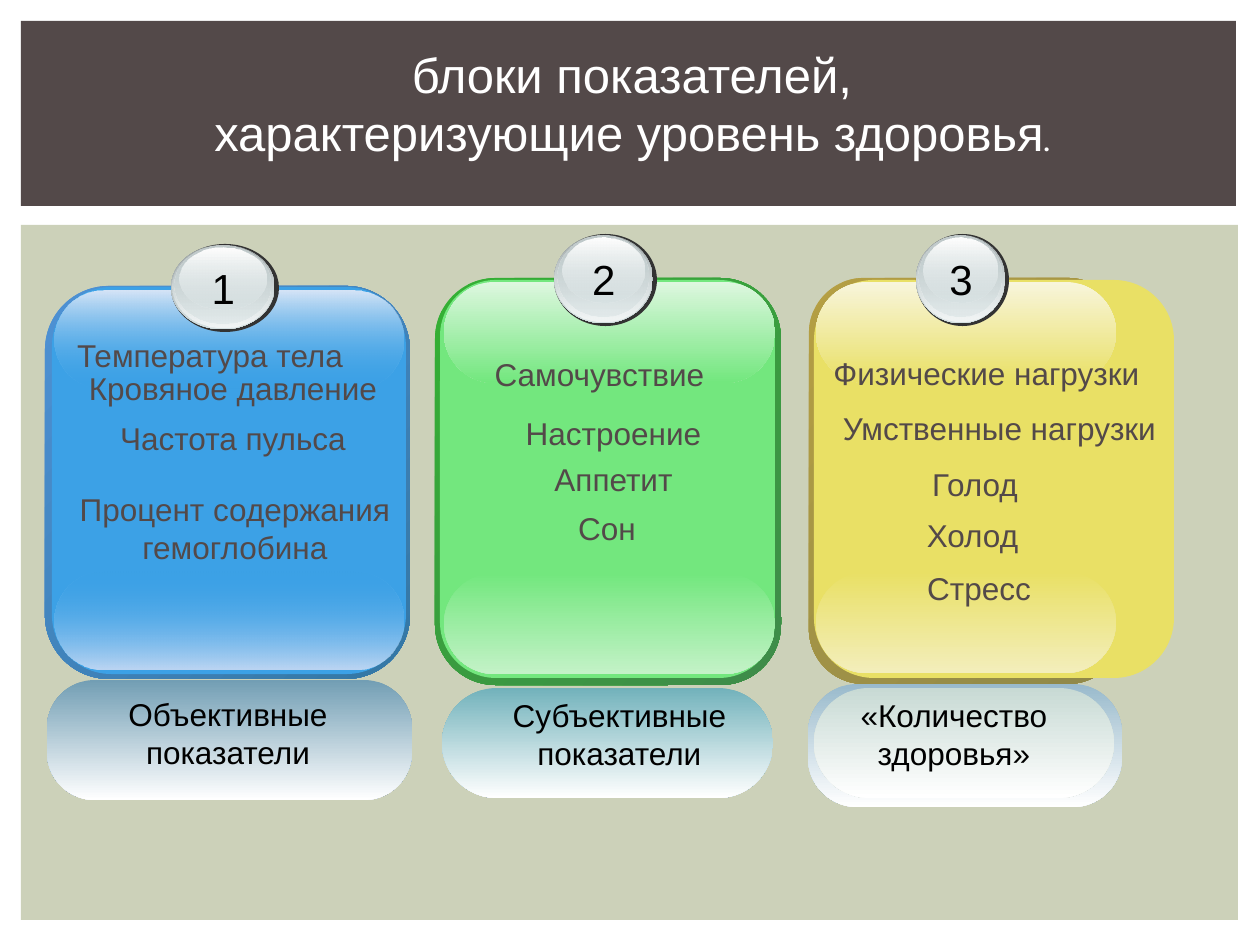
from lxml import etree
from pptx import Presentation
from pptx import util as u
from pptx.dml.color import RGBColor
from pptx.enum import shapes, text
from pptx.oxml.ns import qn

SCALE = 914400 / 126
RECT = shapes.MSO_SHAPE.RECTANGLE
ROUND = shapes.MSO_SHAPE.ROUNDED_RECTANGLE
OVAL = shapes.MSO_SHAPE.OVAL
DARK = "534949"

# Ball layers: left, top, width, height as shares of the rim; stops as (colour, opacity)
LAYERS = [
    ((0, 0.01, 0.96, 0.96), [("99A1A2", 100), ("D6E1E2", 100)]),
    ((0.01, 0.01, 0.94, 0.94), [("D6E1E2", 0), ("F2F5F5", 100)]),
    ((0.03, 0.02, 0.89, 0.88), [("C1CBCC", 100), ("D6E1E2", 48)]),
    ((0.08, 0.04, 0.8, 0.71), [("FFFFFF", 100), ("D6E1E2", 38)]),
]
NUMBER = (0.21, 0.14, 0.55, 0.71)

PANELS = [
    dict(frame=(45, 286, 365, 393), edge=("4E91D4", "3477A4"),
         face=(52, 287, 354, 387), color="3CA1E6", fade=0,
         gloss=(54, 349, 98), tops=(291, 572), light=("D7E5F7", "BDD6F3"),
         bases=[((47, 680, 365, 120), 0.4, "729EB4")],
         ball=(171, 244, 108, 88),
         caption=("Объективные показатели", (54, 689, 348, 90)),
         labels=[("Температура тела", (63, 330, 294, 50)),
                 ("Кровяное давление", (63, 363, 340, 50)),
                 ("Частота пульса", (63, 413, 340, 50)),
                 ("Процент содержания гемоглобина", (34, 484, 402, 90))]),
    dict(frame=(435, 278, 346, 407), edge=("34B034", "3F8B4A"),
         face=(440, 280, 335, 398), color="73E77E", fade=100,
         gloss=(444, 331, 101), tops=(282, 573), light=("DDF7DF", "C3F2C7"),
         bases=[((442, 688, 331, 110), 0.5, "72B2BB")],
         ball=(554, 234, 103, 92),
         caption=("Субъективные показатели", (455, 690, 329, 92)),
         labels=[("Самочувствие", (481, 349, 237, 50)),
                 ("Настроение", (512, 408, 203, 50)),
                 ("Аппетит", (541, 454, 145, 50)),
                 ("Сон", (561, 503, 92, 50))]),
    dict(frame=(809, 278, 314, 406), edge=("B59F43", "8F8849"),
         face=(814, 280, 360, 398), color="E9E065", fade=100,
         gloss=(816, 300, 101), tops=(282, 572), light=("F8F5DB", "F3EEBB"),
         bases=[((808, 684, 314, 123), 0.4, "99BACC"),
                ((814, 688, 300, 110), 0.5, "C8DAD4")],
         ball=(916, 234, 93, 92),
         caption=("«Количество здоровья»", (809, 690, 290, 90)),
         labels=[("Физические нагрузки", (798, 348, 377, 50)),
                 ("Умственные нагрузки", (805, 403, 389, 50)),
                 ("Голод", (919, 459, 112, 50)),
                 ("Холод", (914, 510, 117, 50)),
                 ("Стресс", (914, 563, 130, 50))]),
]


def px(n):
    return u.Emu(round(n * SCALE))


def rgb(code):
    return RGBColor.from_string(code)


def add_block(parent, kind, box, fill, adj=None, angle=90):
    """Draw a preset shape; fill is a hex colour or two (colour, opacity) stops."""
    shape = parent.shapes.add_shape(kind, *map(px, box))
    shape.shadow.inherit = False
    shape.line.fill.background()
    if adj is not None:
        shape.adjustments[0] = adj
    if isinstance(fill, str):
        shape.fill.solid()
        shape.fill.fore_color.rgb = rgb(fill)
        return
    shape.fill.gradient()
    shape.fill.gradient_angle = 360 - angle
    for stop, (code, _) in zip(shape.fill.gradient_stops, fill):
        stop.color.rgb = rgb(code)
    colors = shape._element.spPr.iter(qn("a:srgbClr"))
    for node, (_, alpha) in zip(list(colors), fill):
        if alpha < 100:
            etree.SubElement(node, qn("a:alpha")).set("val", str(alpha * 1000))


def style(run, size, color, name="Arial"):
    run.font.size = u.Pt(size)
    run.font.name = name
    run.font.color.rgb = rgb(color)


def add_label(parent, words, box, color, size=18):
    frame = parent.shapes.add_textbox(*map(px, box)).text_frame
    frame.text = words
    frame.word_wrap = " " in words
    para = frame.paragraphs[0]
    para.alignment = text.PP_ALIGN.CENTER
    style(para.runs[0], size, color)


def add_ball(parent, digit, rim):
    left, top, width, height = rim

    def part(share):
        x, y, w, h = share
        return left + x * width, top + y * height, w * width, h * height

    add_block(parent, OVAL, rim, "333333")
    for share, stops in LAYERS:
        add_block(parent, OVAL, part(share), stops)
    add_label(parent, digit, part(NUMBER), "000000", 24)


def add_panel(slide, index, panel):
    group = slide.shapes.add_group_shape()
    add_block(group, ROUND, panel["frame"],
              [(code, 100) for code in panel["edge"]], 0.175, 45)
    add_block(group, ROUND, panel["face"], panel["color"], 0.167)
    left, width, height = panel["gloss"]
    upper, lower = panel["tops"]
    shine, glow = [(code, 100) for code in panel["light"]]
    clear = (panel["color"], panel["fade"])
    add_block(group, ROUND, (left, lower, width, height), [clear, glow], 0.5)
    add_block(group, ROUND, (left, upper, width, height), [shine, clear], 0.5)
    for box, adj, code in panel["bases"]:
        add_block(group, ROUND, box, [(code, 100), ("FFFFFF", 100)], adj)
    add_ball(group, str(index), panel["ball"])
    add_label(slide, *panel["caption"], "000000")
    for words, box in panel["labels"]:
        add_label(slide, words, box, DARK)


def add_title(slide):
    frame = slide.shapes.add_textbox(*map(px, (42, 50, 1180, 100))).text_frame
    frame.word_wrap = True
    frame.text = "блоки показателей,\nхарактеризующие уровень здоровья"
    for para in frame.paragraphs:
        para.alignment = text.PP_ALIGN.CENTER
        para.line_spacing = 0.8
        para.space_before = u.Pt(6)
        style(para.runs[0], 28, "FFFFFF")
    dot = frame.paragraphs[-1].add_run()
    dot.text = "."
    style(dot, 20, "FFFFFF", "Karla")


def main():
    deck = Presentation()
    deck.slide_width, deck.slide_height = px(1260), px(945)
    slide = deck.slides.add_slide(deck.slide_layouts[6])
    add_block(slide, RECT, (21, 225, 1217, 695), "CCD1B9")
    add_block(slide, RECT, (21, 21, 1215, 185), DARK)
    for index, panel in enumerate(PANELS, 1):
        add_panel(slide, index, panel)
    add_title(slide)
    deck.save("out.pptx")


if __name__ == "__main__":
    main()
